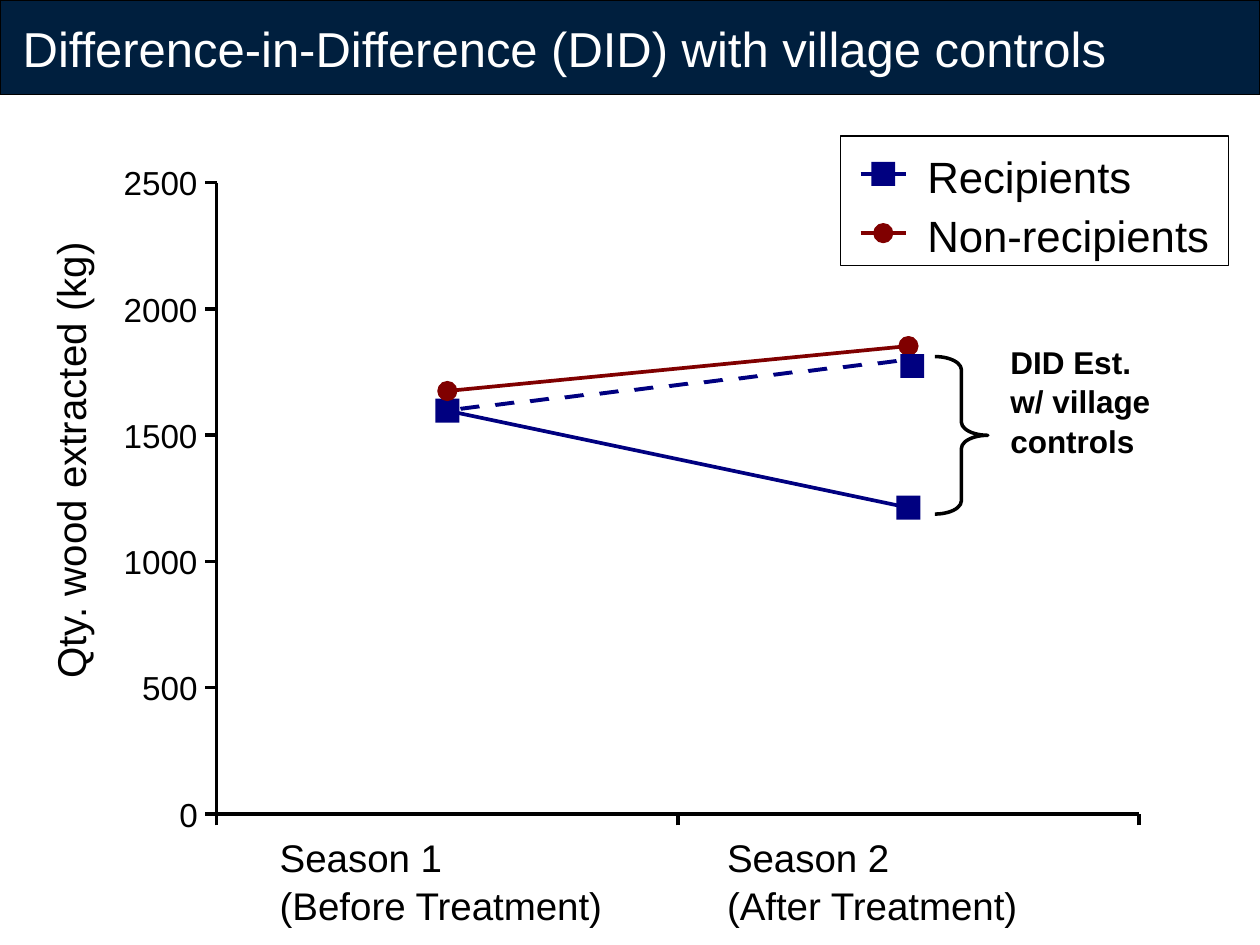
from lxml.etree import SubElement
from pptx import Presentation
from pptx.dml.color import RGBColor
from pptx.enum.shapes import MSO_CONNECTOR as Connector, MSO_SHAPE as Preset
from pptx.enum.text import MSO_ANCHOR as Anchor, MSO_AUTO_SIZE as AutoSize, PP_ALIGN as Align
from pptx.oxml.ns import qn
from pptx.util import Inches, Pt

COLORS = {
    "ink": "000000",
    "paper": "FFFFFF",
    "band": "001F3E",
    "recipients": "000080",
    "others": "800000",
}
COLUMNS, ROWS = 100, 75
AXIS_LEFT, AXIS_RIGHT = 17.2, 90.4
AXIS_TOP, AXIS_BOTTOM = 14.5, 64.6
AXIS_MAX, TICK_STEP = 2500, 500
SEASON_WIDTH = (AXIS_RIGHT - AXIS_LEFT) / 2
SEASONS = [AXIS_LEFT + SEASON_WIDTH * (index + 0.5) for index in range(2)]
SERIES = {"recipients": (1597, 1213), "others": (1675, 1853)}
MARKERS = {"recipients": (Preset.RECTANGLE, 1.9), "others": (Preset.OVAL, 1.5)}


def level(value):
    return AXIS_BOTTOM - (AXIS_BOTTOM - AXIS_TOP) * value / AXIS_MAX


def color(name):
    return RGBColor.from_string(COLORS[name])


class SlideBuilder:
    font = "Arial"

    def __init__(self):
        self.deck = Presentation()
        self.deck.slide_width, self.deck.slide_height = Inches(10), Inches(7.5)
        self.page = self.deck.slides.add_slide(self.deck.slide_layouts[5])
        self.canvas = self.page.shapes

    def grid(self, *lengths):
        sizes = (self.deck.slide_width / COLUMNS, self.deck.slide_height / ROWS)
        return [round(length * sizes[index % 2]) for index, length in enumerate(lengths)]

    def group(self):
        self.canvas = self.page.shapes.add_group_shape().shapes

    def ungroup(self):
        self.canvas = self.page.shapes

    def paint(self, shape, fill=None, line=None, width=0.75):
        shape.shadow.inherit = False
        for part, name in ((shape.fill, fill), (shape.line.fill, line)):
            if name:
                part.solid()
                part.fore_color.rgb = color(name)
            else:
                part.background()
        if line:
            shape.line.width = Pt(width)
        return shape

    def shape(self, preset, *place, **look):
        return self.paint(self.canvas.add_shape(preset, *self.grid(*place)), **look)

    def marker(self, series, column, row):
        preset, size = MARKERS[series]
        line = series if preset == Preset.OVAL else None
        self.shape(preset, column - size / 2, row - size / 2, size, size, fill=series, line=line)

    def line(self, *ends, name="ink", width=0):
        line = self.canvas.add_connector(Connector.STRAIGHT, *self.grid(*ends))
        line.line.color.rgb = color(name)
        line.line.width = Pt(width)
        SubElement(line.element.spPr, qn("a:effectLst"))

    def polygon(self, points, fill):
        corners = [self.grid(*point) for point in points]
        builder = self.canvas.build_freeform(*corners[0], scale=1.0)
        builder.add_line_segments(corners[1:], close=True)
        self.paint(builder.convert_to_shape(), fill=fill)

    def fill_text(self, box, lines, size, name="ink", bold=False, inset=0, gap=0,
                  wrap=False, auto_size=AutoSize.SHAPE_TO_FIT_TEXT):
        frame = box.text_frame
        settings = {
            "word_wrap": wrap,
            "auto_size": auto_size,
            "vertical_anchor": Anchor.TOP,
            "margin_left": Inches(inset),
            "margin_right": Inches(inset),
            "margin_top": Inches(inset / 2),
            "margin_bottom": Inches(inset / 2),
        }
        for key, value in settings.items():
            setattr(frame, key, value)
        for index, text in enumerate(lines):
            para = frame.add_paragraph() if index else frame.paragraphs[0]
            para.alignment = Align.LEFT
            if index and gap:
                para.space_before = Pt(gap)
            span = para.add_run()
            span.text = text
            for key, value in {"name": self.font, "size": Pt(size), "bold": bold}.items():
                setattr(span.font, key, value)
            span.font.color.rgb = color(name)

    def text(self, place, lines, size, rotation=0, **look):
        box = self.canvas.add_textbox(*self.grid(*place))
        box.rotation = rotation
        self.fill_text(box, lines, size, **look)

    def title(self, text):
        band = self.shape(Preset.RECTANGLE, 0, 0, COLUMNS, 7.5, fill="band", line="ink")
        title = self.page.shapes.title
        title.left, title.top, title.width, title.height = self.grid(0.8, 1, 92, 5.7)
        self.fill_text(title, [text], 28, name="paper", inset=0.1, wrap=True,
                       auto_size=AutoSize.NONE)
        band.element.addnext(title.element)

    def axes(self):
        self.line(AXIS_LEFT, AXIS_TOP, AXIS_LEFT, AXIS_BOTTOM, width=2)
        self.line(AXIS_LEFT, AXIS_BOTTOM, AXIS_RIGHT, AXIS_BOTTOM, width=2)
        for value in range(0, AXIS_MAX + 1, TICK_STEP):
            row = level(value)
            label = str(value)
            width = 1.47 * len(label)
            self.line(AXIS_LEFT - 0.9, row, AXIS_LEFT, row)
            self.text((15.7 - width, row - 1.6, width, 3.2), [label], 19)
        for index in range(3):
            column = AXIS_LEFT + SEASON_WIDTH * index
            self.line(column, AXIS_BOTTOM + 0.9, column, AXIS_BOTTOM)

    def series(self):
        for name, values in SERIES.items():
            before, after = map(level, values)
            self.line(SEASONS[0], before, SEASONS[1], after, name=name, width=2.13)
            for column, row in zip(SEASONS, (before, after)):
                self.marker(name, column, row)

    def dashes(self, count=14):
        self.group()
        for index in range(count):
            column, row = 36.5 + 2.76 * index, 32.3 - 0.3 * index
            length = 1.5 if index < count - 1 else 0.8
            rise = 0.13 * length
            self.polygon([(column, row), (column + 0.1, row + 0.3),
                          (column + length + 0.1, row + 0.3 - rise),
                          (column + length, row - rise)], "recipients")
        self.ungroup()

    def legend(self):
        self.group()
        self.shape(Preset.RECTANGLE, 66.7, 10.8, 30.8, 10.3, fill="paper", line="ink", width=0)
        labels = {"recipients": "Recipients", "others": "Non-recipients"}
        for index, (name, label) in enumerate(labels.items()):
            row = 13.8 + 4.7 * index
            self.line(68.3, row, 71.9, row, name=name, width=2.13)
            self.marker(name, 70.1, row)
            self.text((73.6, row - 1.9, 23.3, 4.2), [label], 25)
        self.ungroup()


def main():
    slide = SlideBuilder()
    slide.axes()
    slide.series()
    slide.dashes()
    slide.title("Difference-in-Difference (DID) with village controls")
    slide.text((-11.8, 34.6, 34.7, 3.8), ["Qty. wood extracted (kg)"], 23, rotation=270)
    slide.marker("recipients", 72.4, level(1774))
    brace = slide.shape(Preset.RIGHT_BRACE, 74.2, 28.3, 4.2, 12.5, line="ink", width=2)
    brace.adjustments[0] = 0.25
    slide.text((79.2, 26.7, 16.8, 13), ["DID Est.", "w/ village", "controls"], 18,
               bold=True, inset=0.1, gap=1)
    seasons = {"Season 1": (22.2, "(Before Treatment)"), "Season 2": (57.7, "(After Treatment)")}
    for season, (column, phase) in seasons.items():
        slide.text((column, 66.2, 25.9, 7.3), [season, phase], 22, gap=1)
    slide.legend()
    slide.deck.save("out.pptx")


if __name__ == "__main__":
    main()
